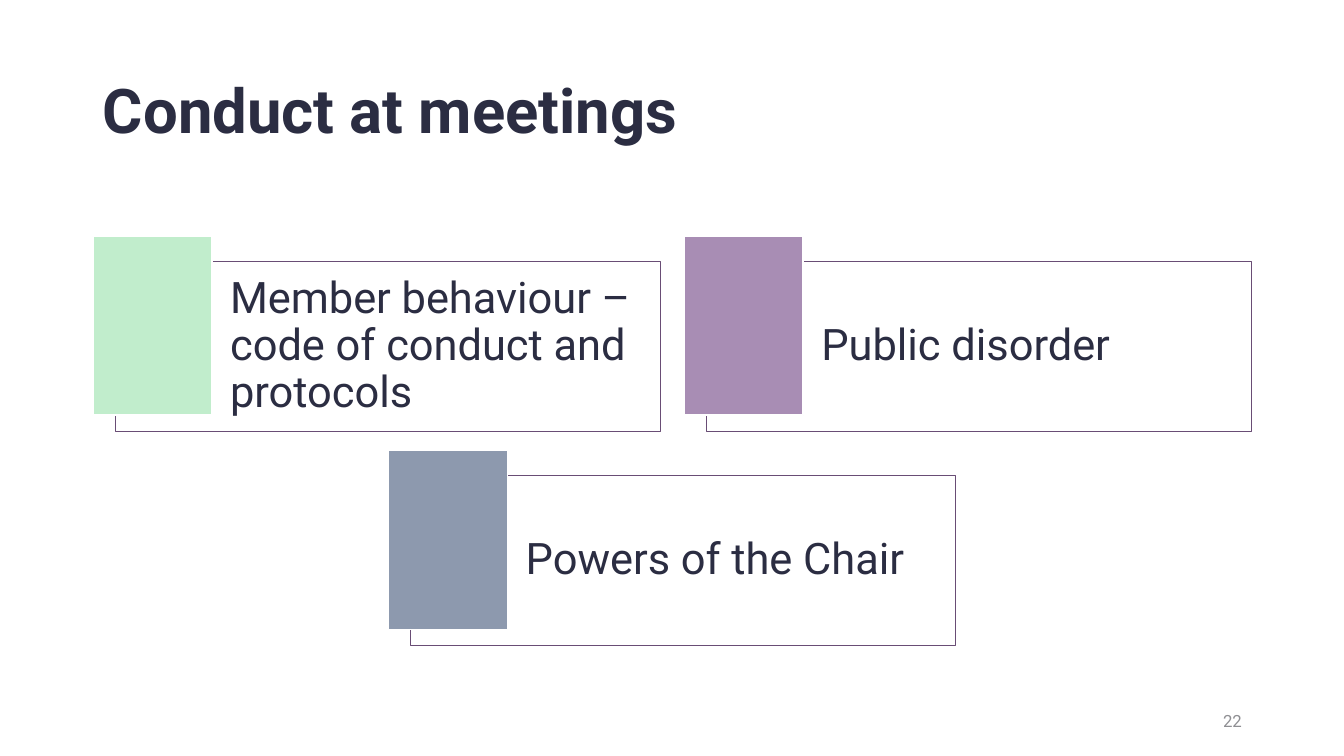
from lxml.etree import SubElement
from pptx import Presentation
from pptx.dml.color import RGBColor
from pptx.enum.shapes import MSO_SHAPE
from pptx.enum.text import MSO_ANCHOR, MSO_AUTO_SIZE, PP_ALIGN
from pptx.oxml.ns import qn
from pptx.util import Cm, Pt

INK, PLUM, WHITE = "2B2D42", "694D75", "FFFFFF"

# Card grid: left, top and steps in cm
LEFT, TOP, STEP_X, STEP_Y = 2.34, 5.96, 14.9, 5.4

# Text, tile colour, column, row
CARDS = [
    ("Member behaviour – code of conduct and protocols", "C1EDCC", 0, 0),
    ("Public disorder", "A88DB4", 1, 0),
    ("Powers of the Chair", "8D99AE", 0.5, 1),
]


def color(code):
    return RGBColor.from_string(code)


def apply(item, values):
    for name, value in values.items():
        setattr(item, name, value)


def write(shape, text, size, code, bold=False, align=PP_ALIGN.LEFT,
          space=1.0, pads=None):
    frame = shape.text_frame
    frame.text = text
    apply(frame, {"word_wrap": True, "auto_size": MSO_AUTO_SIZE.NONE,
                  "vertical_anchor": MSO_ANCHOR.MIDDLE, **(pads or {})})
    para = frame.paragraphs[0]
    apply(para, {"alignment": align, "line_spacing": space})
    font = para.runs[0].font
    apply(font, {"name": "Roboto", "size": Pt(size), "bold": bold})
    font.color.rgb = color(code)


def add_box(group, x, y, wide, high, fill, line, width):
    box = group.shapes.add_shape(MSO_SHAPE.RECTANGLE,
                                 Cm(x), Cm(y), Cm(wide), Cm(high))
    box.shadow.inherit = False
    box.fill.solid()
    box.fill.fore_color.rgb = color(fill)
    box.line.color.rgb = color(line)
    box.line.width = Pt(width)
    return box


def fade(box, percent):
    tint = box.fill._xPr.find(qn("a:solidFill"))[0]
    SubElement(tint, qn("a:alpha"), val=str(percent * 1000))


def add_card(group, text, fill, col, row):
    x, y = LEFT + col * STEP_X, TOP + row * STEP_Y
    panel = add_box(group, x + 0.56, y + 0.62, 13.74, 4.29, WHITE, PLUM, 0.5)
    fade(panel, 40)
    pads = {"margin_left": Cm(2.9), "margin_right": Cm(0.33),
            "margin_top": Cm(0.33), "margin_bottom": Cm(0.33)}
    write(panel, text, 31, INK, space=0.9, pads=pads)
    add_box(group, x, y, 3, 4.5, fill, WHITE, 1)


def main():
    deck = Presentation()
    apply(deck, {"slide_width": Cm(33.87), "slide_height": Cm(19.05)})
    slide = deck.slides.add_slide(deck.slide_layouts[5])

    # Title
    title = slide.shapes.title
    apply(title, {"left": Cm(LEFT), "top": Cm(1.02),
                  "width": Cm(29.21), "height": Cm(3.68)})
    write(title, "Conduct at meetings", 44, INK, bold=True, space=0.9)

    # Cards
    group = slide.shapes.add_group_shape()
    for card in CARDS:
        add_card(group, *card)

    # Page number
    page = slide.shapes.add_textbox(Cm(23.93), Cm(17.65), Cm(7.62), Cm(1.02))
    write(page, "22", 12, "8F8F93", align=PP_ALIGN.RIGHT)

    deck.save("out.pptx")


if __name__ == "__main__":
    main()
